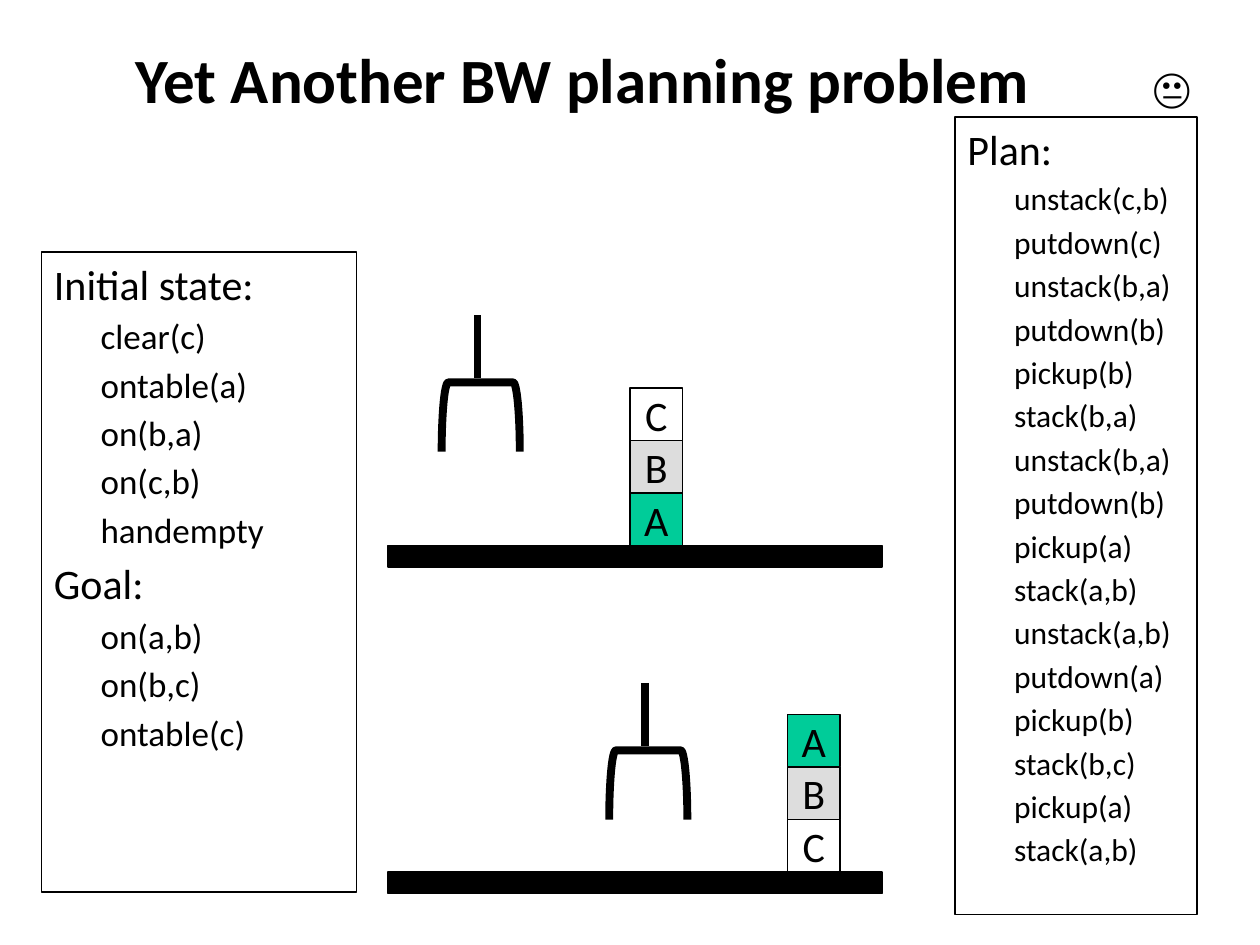
from dataclasses import dataclass

from lxml import etree
from pptx import Presentation
from pptx.dml.color import RGBColor
from pptx.enum import shapes, text
from pptx.oxml.ns import qn
from pptx.util import Inches, Pt


@dataclass(frozen=True)
class Theme:
    ink: str = "000000"
    font: str = "Calibri"
    symbol_font: str = "Times New Roman"
    title: int = 36
    heading: int = 24
    facts: int = 20
    steps: int = 18
    thin: float = 0.75
    thick: float = 4.5
    gap: float = 0.18  # space before a paragraph, as a share of its size


@dataclass(frozen=True)
class Section:
    heading: str
    items: str


@dataclass(frozen=True)
class Scene:
    table_top: float
    stack_left: float
    tower: str  # top to bottom
    hand_x: float
    hand_top: float


THEME = Theme()
BLOCK = 5 / 12
BLOCK_FILLS = {"A": "00CC99", "B": "DDDDDD", "C": None}

STATES = [
    Section("Initial state:", "clear(c) ontable(a) on(b,a) on(c,b) handempty"),
    Section("Goal:", "on(a,b) on(b,c) ontable(c)"),
]
PLAN = [
    Section(
        "Plan:",
        "unstack(c,b) putdown(c) unstack(b,a) putdown(b) pickup(b) stack(b,a) "
        "unstack(b,a) putdown(b) pickup(a) stack(a,b) unstack(a,b) putdown(a) "
        "pickup(b) stack(b,c) pickup(a) stack(a,b)",
    ),
]
SCENES = [
    Scene(table_top=4.33, stack_left=5, tower="CBA", hand_x=3.79, hand_top=2.5),
    Scene(table_top=6.92, stack_left=6.25, tower="ABC", hand_x=5.12, hand_top=5.42),
]


def write(p, content: str, *, size: int, font: str = THEME.font,
          bold: bool = False, align=text.PP_ALIGN.LEFT) -> None:
    p.alignment = align
    r = p.add_run()
    r.text = content
    r.font.name, r.font.size, r.font.bold = font, Pt(size), bold
    r.font.color.rgb = RGBColor.from_string(THEME.ink)


def add_box(slide, left: float, top: float, width: float, height: float, *,
            kind=shapes.MSO_SHAPE.RECTANGLE, fill: str | None = None,
            weight: float = THEME.thin):
    sp = slide.shapes.add_shape(
        kind, Inches(left), Inches(top), Inches(width), Inches(height))
    sp.shadow.inherit = False
    if fill:
        sp.fill.solid()
        sp.fill.fore_color.rgb = RGBColor.from_string(fill)
    else:
        sp.fill.background()
    sp.line.color.rgb = RGBColor.from_string(THEME.ink)
    sp.line.width = Pt(weight)
    return sp


def add_label(slide, content: str, left: float, top: float, width: float,
              height: float, *, wrap: bool = True,
              anchor=text.MSO_ANCHOR.TOP, **fmt) -> None:
    sp = slide.shapes.add_textbox(
        Inches(left), Inches(top), Inches(width), Inches(height))
    tf = sp.text_frame
    tf.word_wrap, tf.vertical_anchor = wrap, anchor
    write(tf.paragraphs[0], content, **fmt)


def add_list(slide, sections: list[Section], left: float, top: float,
             width: float, height: float, item_size: int) -> None:
    tf = add_box(slide, left, top, width, height).text_frame
    tf.word_wrap, tf.vertical_anchor = True, text.MSO_ANCHOR.TOP
    lines = []
    for section in sections:
        lines.append((section.heading, 0, THEME.heading, 0.25))
        lines += [(item, 1, item_size, 0.62) for item in section.items.split()]
    for i, (content, level, size, margin) in enumerate(lines):
        p = tf.add_paragraph() if i else tf.paragraphs[0]
        p.level = level
        p.space_before = Pt(round(THEME.gap * size, 1) if i else 0)
        pPr = p._p.get_or_add_pPr()
        pPr.set("marL", str(Inches(margin)))
        pPr.set("indent", str(Inches(-0.25)))
        write(p, content, size=size)


def add_hand(slide, x: float, top: float) -> None:
    grip = add_box(slide, x - 0.25, top + 0.5, 0.55, 0.62,
                   kind=shapes.MSO_SHAPE.RIGHT_BRACKET, weight=THEME.thick)
    grip.adjustments[0] = 0.095
    grip.rotation = 270
    arm = slide.shapes.add_connector(
        shapes.MSO_CONNECTOR.STRAIGHT,
        Inches(x), Inches(top), Inches(x), Inches(top + 0.5))
    arm.line.color.rgb = RGBColor.from_string(THEME.ink)
    arm.line.width = Pt(THEME.thick)
    etree.SubElement(arm._element.spPr, qn("a:effectLst"))


def add_scene(slide, scene: Scene) -> None:
    add_box(slide, 3.08, scene.table_top, 3.92, 0.17, fill=THEME.ink)
    for level, name in enumerate(reversed(scene.tower), start=1):
        sp = add_box(slide, scene.stack_left, scene.table_top - level * BLOCK,
                     BLOCK, BLOCK, fill=BLOCK_FILLS[name])
        tf = sp.text_frame
        tf.word_wrap, tf.vertical_anchor = False, text.MSO_ANCHOR.MIDDLE
        write(tf.paragraphs[0], name, size=THEME.heading,
              align=text.PP_ALIGN.CENTER)
    add_hand(slide, scene.hand_x, scene.hand_top)


def main() -> None:
    prs = Presentation()
    prs.slide_width, prs.slide_height = Inches(10), Inches(7.5)
    slide = prs.slides.add_slide(prs.slide_layouts[6])

    # Title
    add_label(slide, "Yet Another BW planning problem", 0, 0, 9.25, 1.25,
              anchor=text.MSO_ANCHOR.MIDDLE, size=THEME.title, bold=True,
              align=text.PP_ALIGN.CENTER)

    # Initial state and goal
    add_list(slide, STATES, 0.33, 2, 2.5, 5.08, THEME.facts)

    # Block towers with robot hands
    for scene in SCENES:
        add_scene(slide, scene)

    # Plan and its verdict
    add_list(slide, PLAN, 7.58, 0.93, 1.92, 6.33, THEME.steps)
    add_label(slide, "😐", 9.05, 0.44, 0.65, 0.5, wrap=False,
              size=THEME.heading, font=THEME.symbol_font)

    prs.save("out.pptx")


if __name__ == "__main__":
    main()
